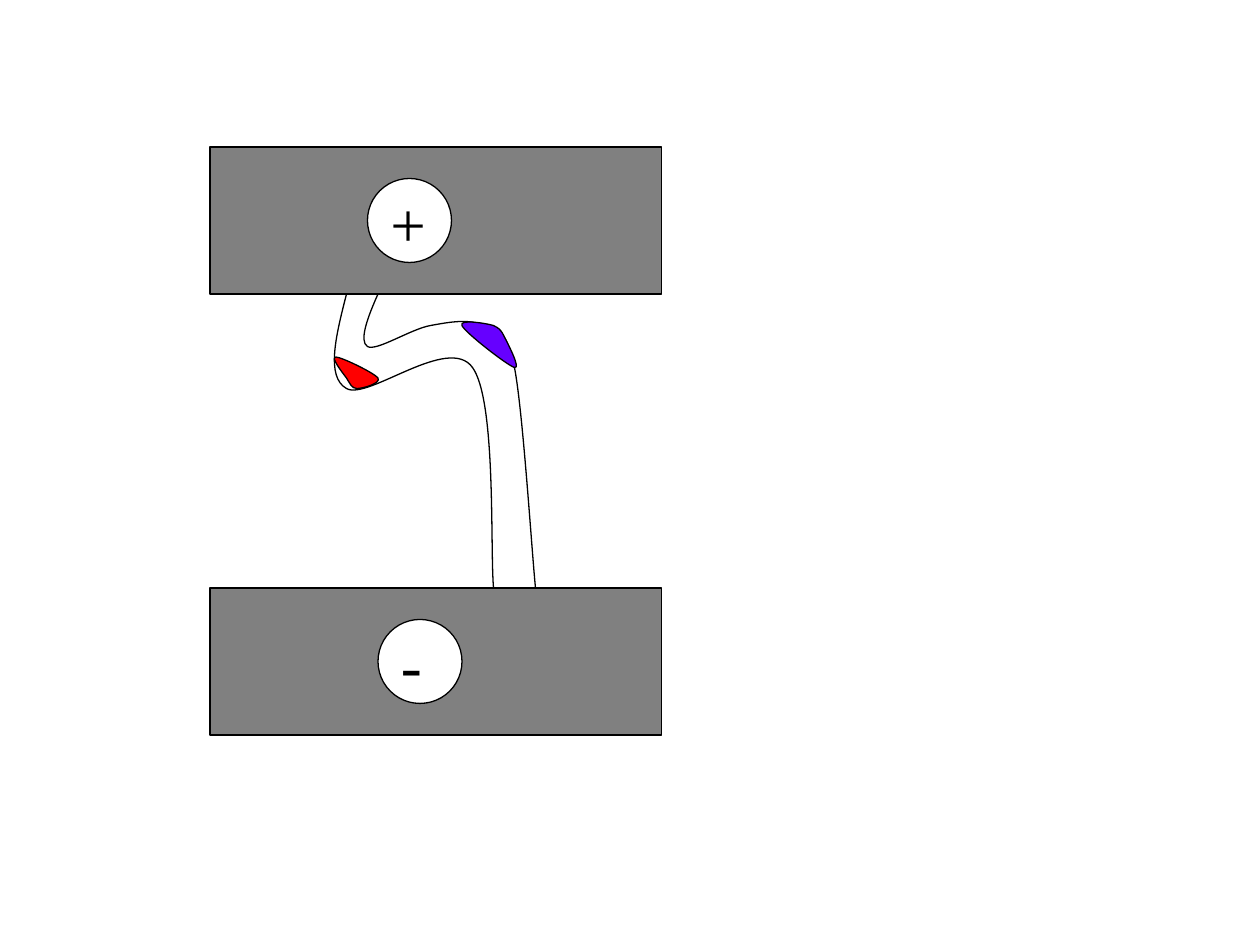
from dataclasses import dataclass
from lxml import etree
from pptx import Presentation
from pptx.dml.color import RGBColor
from pptx.enum.shapes import MSO_SHAPE
from pptx.oxml.ns import qn
from pptx.util import Pt

RECTANGLE = MSO_SHAPE.RECTANGLE
OVAL = MSO_SHAPE.OVAL


@dataclass(frozen=True)
class Theme:
    plate: RGBColor = RGBColor(0x80, 0x80, 0x80)
    ink: RGBColor = RGBColor(0, 0, 0)
    disc: RGBColor = RGBColor(0xFF, 0xFF, 0xFF)
    red: RGBColor = RGBColor(0xFF, 0, 0)
    violet: RGBColor = RGBColor(0x66, 0, 0xFF)
    font: str = "Times New Roman"
    sign_size: float = 36
    outline: float = 0.75


theme = Theme()


def paint(shape, color):
    shape.shadow.inherit = False
    if color is None:
        shape.fill.background()
    else:
        shape.fill.solid()
        shape.fill.fore_color.rgb = color
    shape.line.color.rgb = theme.ink
    shape.line.width = Pt(theme.outline)


def add_curve(shapes, knots, closed):
    start, *rest = [(Pt(x), Pt(y)) for x, y in knots]
    builder = shapes.build_freeform(*start)
    builder.add_line_segments(rest, close=closed)
    curve = builder.convert_to_shape()
    lines = curve.element.xpath(".//a:lnTo")
    for index in range(0, len(lines), 3):
        bezier = etree.Element(qn("a:cubicBezTo"))
        lines[index].addprevious(bezier)
        for line in lines[index:index + 3]:
            bezier.append(line[0])
            line.getparent().remove(line)
    return curve


prs = Presentation()
prs.slide_width = Pt(720)
prs.slide_height = Pt(540)
slide = prs.slides.add_slide(prs.slide_layouts[6])
shapes = slide.shapes

electrodes = [("-", 336, 216), ("+", 84, 210)]
for sign, top, disc_left in electrodes:
    plate = shapes.add_shape(RECTANGLE, Pt(120), Pt(top), Pt(258), Pt(84))
    paint(plate, theme.plate)

left_edge = [
    (198, 168),
    (192, 191.5), (186, 215.3), (198, 222),
    (210.2, 229), (256.3, 190.8), (270, 210),
    (283.7, 229), (280, 314), (282, 336),
]
right_edge = [
    (216, 168),
    (210, 181.4), (205, 195), (210, 198),
    (215, 201), (234.7, 188), (246, 186),
    (257, 184), (268, 182), (276, 186),
    (283.7, 190), (288.7, 185), (294, 210),
    (298.8, 234.7), (303.8, 314), (306, 336),
]
for edge in (left_edge, right_edge):
    paint(add_curve(shapes, edge, False), None)

for sign, top, disc_left in reversed(electrodes):
    disc = shapes.add_shape(OVAL, Pt(disc_left), Pt(top + 18), Pt(48), Pt(48))
    paint(disc, theme.disc)
    label = shapes.add_textbox(Pt(disc_left + 6), Pt(top + 18), Pt(34.5), Pt(50.4))
    label.text_frame.word_wrap = True
    run = label.text_frame.paragraphs[0].add_run()
    run.text = sign
    run.font.name = theme.font
    run.font.size = Pt(theme.sign_size)
    run.font.color.rgb = theme.ink

red_patch = [
    (192, 204),
    (195, 204), (213.8, 213), (216, 216),
    (218, 219), (207.4, 222), (204, 222),
    (200.9, 222), (200, 219), (198, 216),
    (195.8, 213), (188.6, 204), (192, 204),
]
violet_patch = [
    (264, 186),
    (265.7, 190), (290, 208.8), (294, 210),
    (298, 211), (290, 196), (288, 192),
    (286, 188), (285, 187.5), (282, 186),
    (279, 185), (262, 182), (264, 186),
]
for patch, color in ((red_patch, theme.red), (violet_patch, theme.violet)):
    paint(add_curve(shapes, patch, True), color)

prs.save("out.pptx")
